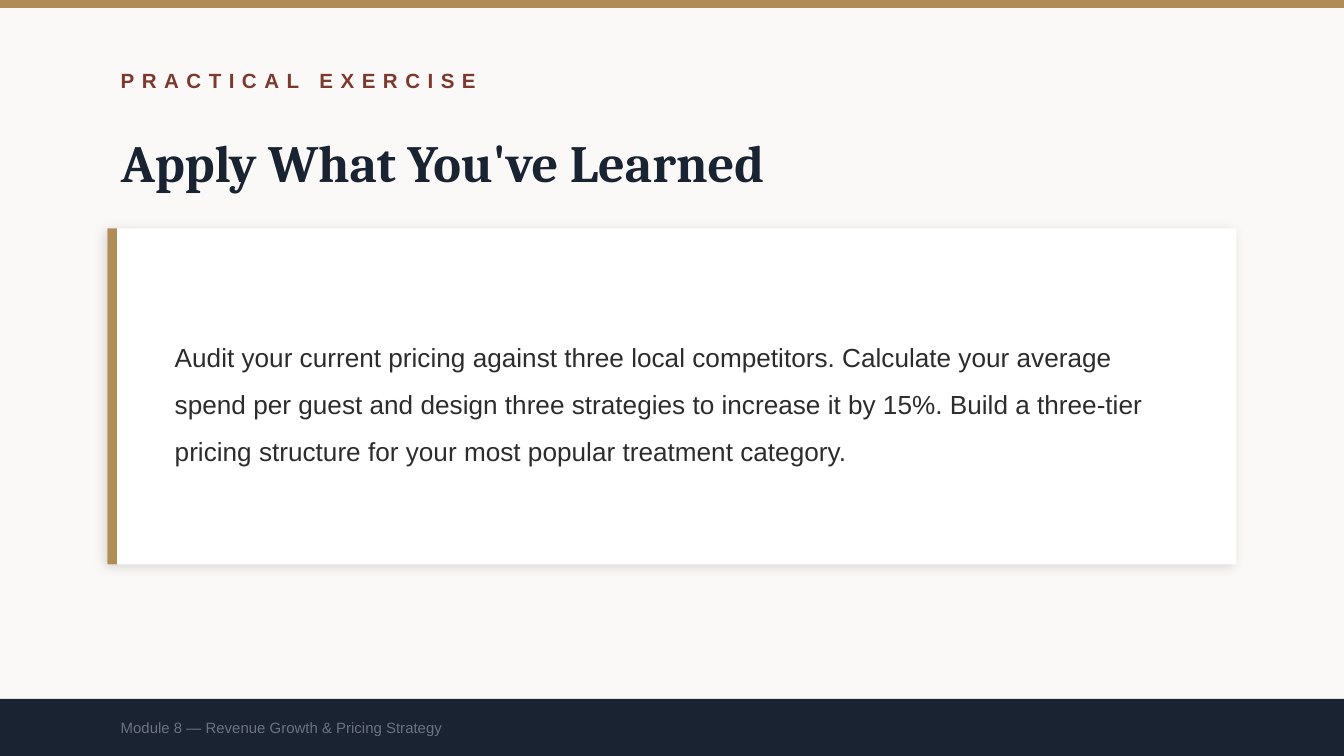
from lxml.etree import SubElement
from pptx import Presentation
from pptx.dml.color import RGBColor
from pptx.enum.shapes import MSO_SHAPE
from pptx.enum.text import MSO_ANCHOR, MSO_AUTO_SIZE, PP_ALIGN
from pptx.oxml.ns import qn
from pptx.util import Pt

PX = 914400 // 200
WIDTH, HEIGHT = 2000, 1125
MARGIN = 160
TEXT_WIDTH = 1600

PAPER = RGBColor(0xFA, 0xF9, 0xF7)
GOLD = RGBColor(0xB0, 0x8D, 0x57)
RUST = RGBColor(0x7C, 0x3A, 0x2E)
NAVY = RGBColor(0x1A, 0x23, 0x32)
WHITE = RGBColor(0xFF, 0xFF, 0xFF)
INK = RGBColor(0x2C, 0x2C, 0x2C)
GREY = RGBColor(0x6B, 0x72, 0x80)


def scaled(box):
    """Turn a box in px into EMU."""
    return [length * PX for length in box]


def add_panel(slide, box, color):
    """Draw a plain filled rectangle."""
    panel = slide.shapes.add_shape(MSO_SHAPE.RECTANGLE, *scaled(box))
    panel.shadow.inherit = False
    panel.fill.solid()
    panel.fill.fore_color.rgb = color
    panel.line.fill.background()
    return panel


def add_soft_shadow(panel):
    """Give a panel a faint shadow to the lower left."""
    effects = panel.element.spPr.find(qn("a:effectLst"))
    shadow = SubElement(effects, qn("a:outerShdw"), blurRad=str(Pt(6)),
                        dist=str(Pt(2)), dir=str(135 * 60000),
                        algn="bl", rotWithShape="0")
    black = SubElement(shadow, qn("a:srgbClr"), val="000000")
    SubElement(black, qn("a:alpha"), val="12000")


def write(holder, text, size, color, font="Arial", bold=False):
    """Set one left-aligned, vertically centred paragraph and return it."""
    frame = holder.text_frame
    frame.text = text
    frame.word_wrap = True
    frame.auto_size = MSO_AUTO_SIZE.NONE
    frame.vertical_anchor = MSO_ANCHOR.MIDDLE
    paragraph = frame.paragraphs[0]
    paragraph.alignment = PP_ALIGN.LEFT
    paragraph.space_before = Pt(0)
    style = paragraph.runs[0].font
    style.name, style.size, style.bold = font, Pt(size), bold
    style.color.rgb = color
    return paragraph


def place(placeholder, box):
    """Move a placeholder to a box, in front of what is drawn so far."""
    placeholder.left, placeholder.top, placeholder.width, placeholder.height = scaled(box)
    placeholder.element.getparent().append(placeholder.element)


def build_heading(slide, box):
    """Place the spaced label above the slide title."""
    left, top, width, height = box
    label = slide.shapes.add_textbox(*scaled((left, top, width, 80)))
    paragraph = write(label, "PRACTICAL EXERCISE", 11, RUST, bold=True)
    paragraph.runs[0].font.element.set("spc", "400") if hasattr(
        paragraph.runs[0].font, "element") else paragraph.runs[0]._r.get_or_add_rPr().set("spc", "400")
    title = slide.shapes.title
    place(title, (left, top + 100, width, height - 100))
    write(title, "Apply What You've Learned", 28, NAVY, "Cambria", True)


def build_exercise(slide, box):
    """Place the white card with its gold edge and the task text."""
    left, top, width, height = box
    add_soft_shadow(add_panel(slide, box, WHITE))
    add_panel(slide, (left, top, 14, height), GOLD)
    task = slide.placeholders[1]
    place(task, (left + 80, top + 40, width - 140, height - 80))
    paragraph = write(
        task,
        "Audit your current pricing against three local competitors. "
        "Calculate your average spend per guest and design three strategies "
        "to increase it by 15%. Build a three-tier pricing structure for "
        "your most popular treatment category.",
        14, INK)
    paragraph.line_spacing = 1.5
    properties = paragraph._p.get_or_add_pPr()
    properties.set("marL", "0")
    properties.set("indent", "0")
    SubElement(properties, qn("a:buNone"))


def build_footer(slide, box):
    """Place the navy band with the module name."""
    left, top, width, height = box
    add_panel(slide, box, NAVY)
    module = slide.shapes.add_textbox(*scaled((left + MARGIN, top, TEXT_WIDTH, height)))
    write(module, "Module 8 — Revenue Growth & Pricing Strategy", 8, GREY)


def main():
    """Build and save the slide."""
    deck = Presentation()
    deck.slide_width, deck.slide_height = WIDTH * PX, HEIGHT * PX
    slide = deck.slides.add_slide(deck.slide_layouts[1])
    slide.background.fill.solid()
    slide.background.fill.fore_color.rgb = PAPER
    add_panel(slide, (0, 0, WIDTH, 12), GOLD)
    build_heading(slide, (MARGIN, 80, TEXT_WIDTH, 220))
    build_exercise(slide, (MARGIN, 340, WIDTH - 2 * MARGIN, 500))
    build_footer(slide, (0, 1040, WIDTH, HEIGHT - 1040))
    deck.save("out.pptx")


if __name__ == "__main__":
    main()
